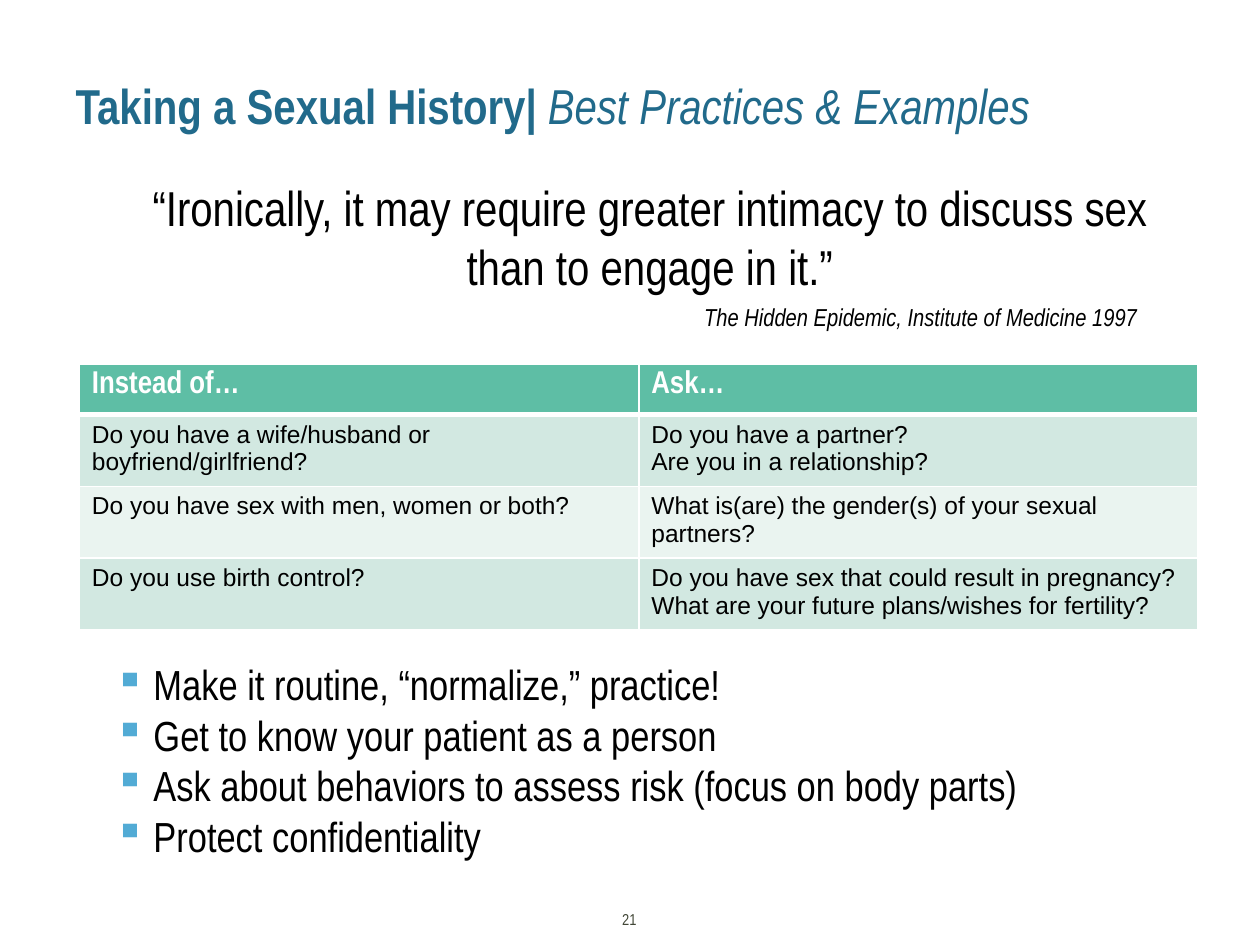
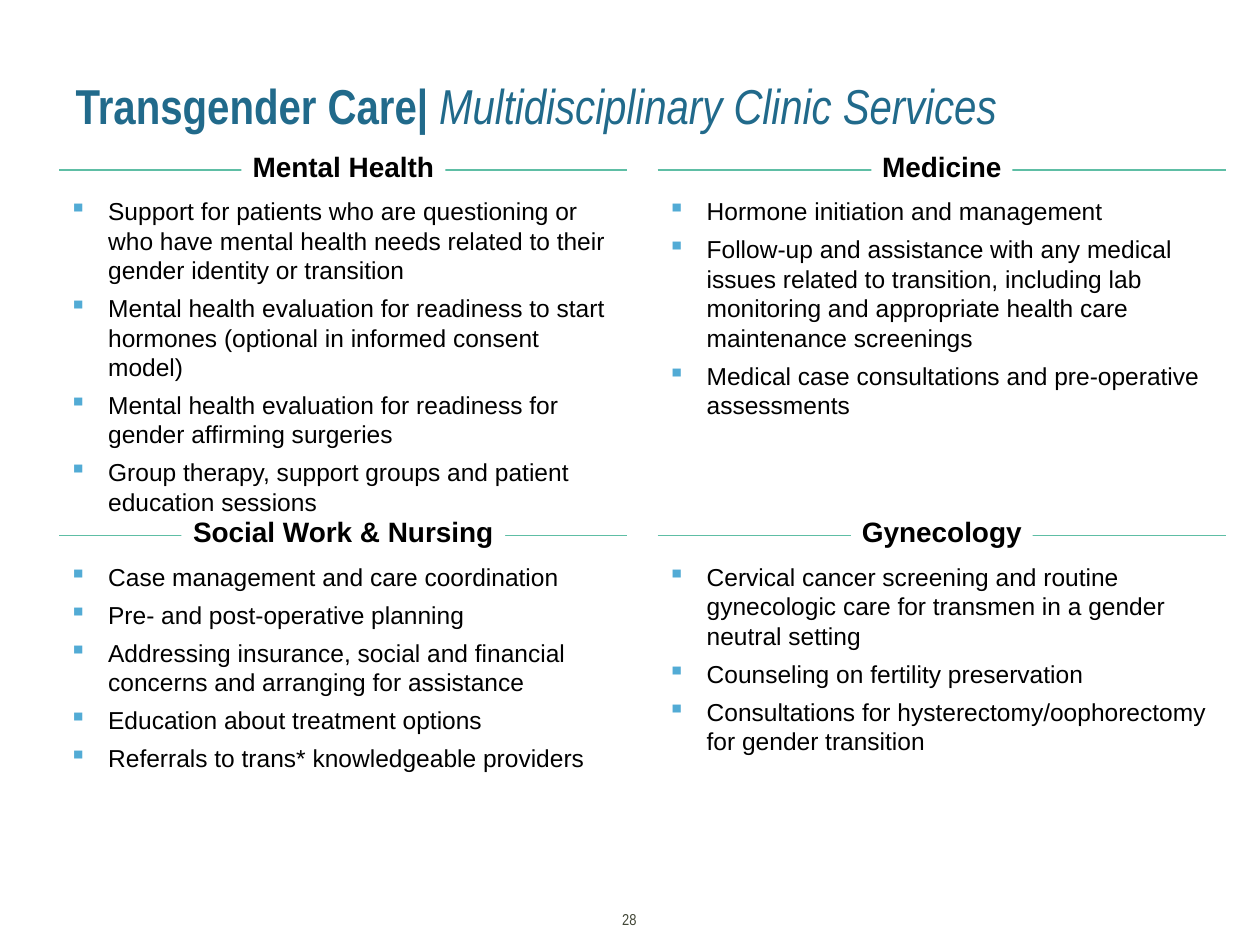
import pptx
import pptx.util
import pptx.dml.color
import pptx.enum.shapes
import pptx.enum.text
import pptx.oxml.ns
from lxml import etree

Inches, Pt = pptx.util.Inches, pptx.util.Pt
ALIGN = pptx.enum.text.PP_ALIGN
ANCHOR = pptx.enum.text.MSO_ANCHOR
qn = pptx.oxml.ns.qn

COLORS = {
    "title": "216A8B", "text": "000000", "white": "FFFFFF", "number": "414636",
    "bullet": "52ABD5", "green": "5EBEA5", "band": "D2E8E1", "band_light": "EAF4F0",
}
NARROW, SANS = "Arial Narrow", "Arial"

QUESTIONS = [
    (["Do you have a wife/husband or boyfriend/girlfriend?"],
     ["Do you have a partner?", "Are you in a relationship?"]),
    (["Do you have sex with men, women or both?"],
     ["What is(are) the gender(s) of your sexual partners?"]),
    (["Do you use birth control?"],
     ["Do you have sex that could result in pregnancy?",
      "What are your future plans/wishes for fertility?"]),
]
PRACTICES = [
    "Make it routine, “normalize,” practice!",
    "Get to know your patient as a person",
    "Ask about behaviors to assess risk (focus on body parts)",
    "Protect confidentiality",
]
# Heading, width of its label, services
CLINICS = [
    ("Mental Health", 1.62, [
        "Support for patients who are questioning or who have mental health needs "
        "related to their gender identity or transition",
        "Mental health evaluation for readiness to start hormones "
        "(optional in informed consent model)",
        "Mental health evaluation for readiness for gender affirming surgeries",
        "Group therapy, support groups and patient education sessions"]),
    ("Medicine", 1.12, [
        "Hormone initiation and management",
        "Follow-up and assistance with any medical issues related to transition, "
        "including lab monitoring and appropriate health care maintenance screenings",
        "Medical case consultations and pre-operative assessments"]),
    ("Social Work & Nursing", 2.57, [
        "Case management and care coordination",
        "Pre- and post-operative planning",
        "Addressing insurance, social and financial concerns and arranging for assistance",
        "Education about treatment options",
        "Referrals to trans* knowledgeable providers"]),
    ("Gynecology", 1.44, [
        "Cervical cancer screening and routine gynecologic care for transmen "
        "in a gender neutral setting",
        "Counseling on fertility preservation",
        "Consultations for hysterectomy/oophorectomy for gender transition"]),
]


def rgb(name):
    return pptx.dml.color.RGBColor.from_string(COLORS[name])


def add_run(p, text, size, font, color="text", bold=False, italic=False):
    r = p.add_run()
    r.text = text
    r.font.size, r.font.name = Pt(size), font
    r.font.bold, r.font.italic = bold, italic
    r.font.color.rgb = rgb(color)


def next_paragraph(tf, index):
    return tf.paragraphs[0] if index == 0 else tf.add_paragraph()


def add_textbox(s, x, y, w, h):
    tf = s.shapes.add_textbox(Inches(x), Inches(y), Inches(w), Inches(h)).text_frame
    tf.word_wrap = True
    return tf


def add_bullets(s, box, items, size, font, gap=0):
    tf = add_textbox(s, *box)
    for i, item in enumerate(items):
        p = next_paragraph(tf, i)
        pPr = p._p.get_or_add_pPr()
        pPr.set("marL", str(Inches(0.31)))
        pPr.set("indent", str(-Inches(0.31)))
        color = etree.SubElement(pPr, qn("a:buClr"))
        etree.SubElement(color, qn("a:srgbClr"), val=COLORS["bullet"])
        etree.SubElement(pPr, qn("a:buChar"), char="▪")
        if i:
            p.space_before = Pt(gap)
        add_run(p, item, size, font)


def new_slide(prs, topic, subtitle, number):
    """Slide with the shared title and page number."""
    s = prs.slides.add_slide(prs.slide_layouts[5])
    title = s.shapes.title
    title.left, title.top = Inches(0.5), Inches(0.6)
    title.width, title.height = Inches(9.33), Inches(0.53)
    tf = title.text_frame
    tf.auto_size = pptx.enum.text.MSO_AUTO_SIZE.NONE
    tf.vertical_anchor = ANCHOR.MIDDLE
    p = tf.paragraphs[0]
    p.alignment, p.line_spacing = ALIGN.LEFT, 0.9
    add_run(p, topic + "| ", 28, NARROW, "title", bold=True)
    add_run(p, subtitle, 28, NARROW, "title", italic=True)

    p = add_textbox(s, 4.74, 7.17, 0.51, 0.25).paragraphs[0]
    p.alignment = ALIGN.CENTER
    add_run(p, str(number), 9, NARROW, "number")
    return s


def add_quote(s, x, y, w, h):
    tf = add_textbox(s, x, y, w, h)
    p = tf.paragraphs[0]
    p.alignment = ALIGN.CENTER
    add_run(p, "“Ironically, it may require greater intimacy to discuss sex "
               "than to engage in it.”", 28, NARROW)
    p = tf.add_paragraph()
    p.space_before = Pt(4)
    p._p.get_or_add_pPr().set("marL", str(Inches(4.68)))
    p._p.get_or_add_pPr().set("indent", "0")
    add_run(p, "The Hidden Epidemic, Institute of Medicine 1997", 14, NARROW, italic=True)


def format_cell(cell, lines, fill, top, bottom, **style):
    tcPr = cell._tc.get_or_add_tcPr()
    for side, width in (("L", 1), ("R", 1), ("T", top), ("B", bottom)):
        ln = etree.SubElement(tcPr, qn("a:ln" + side), w=str(Pt(width)))
        solid = etree.SubElement(ln, qn("a:solidFill"))
        etree.SubElement(solid, qn("a:srgbClr"), val=COLORS["white"])
    cell.fill.solid()
    cell.fill.fore_color.rgb = rgb(fill)
    for i, line in enumerate(lines):
        add_run(next_paragraph(cell.text_frame, i), line, **style)


def add_question_table(s, x, y, w):
    heights = [0.4] + [0.57] * len(QUESTIONS)
    table = s.shapes.add_table(len(heights), 2, Inches(x), Inches(y),
                               Inches(w), Inches(sum(heights))).table
    for row, height in zip(table.rows, heights):
        row.height = Inches(height)
    for col, heading in enumerate(("Instead of…", "Ask…")):
        format_cell(table.cell(0, col), [heading], "green", 1, 3,
                    size=18, font=NARROW, color="white", bold=True)
        for row, question in enumerate(QUESTIONS, 1):
            format_cell(table.cell(row, col), question[col],
                        "band" if row % 2 else "band_light",
                        3 if row == 1 else 1, 1, size=14, font=SANS)


def add_clinic(s, x, y, w, h, heading, label_w, services):
    """Heading on a rule, with its services below."""
    line = s.shapes.add_connector(pptx.enum.shapes.MSO_CONNECTOR.STRAIGHT,
                                  Inches(x), Inches(y + 0.15),
                                  Inches(x + w), Inches(y + 0.15))
    line.line.color.rgb, line.line.width = rgb("green"), Pt(1)
    etree.SubElement(line._element.spPr, qn("a:effectLst"))

    label = s.shapes.add_shape(pptx.enum.shapes.MSO_SHAPE.RECTANGLE,
                               Inches(x + (w - label_w) / 2), Inches(y),
                               Inches(label_w), Inches(0.26))
    label.shadow.inherit = False
    label.fill.solid()
    label.fill.fore_color.rgb = rgb("white")
    label.line.fill.background()
    tf = label.text_frame
    tf.word_wrap, tf.vertical_anchor = False, ANCHOR.MIDDLE
    tf.margin_left = tf.margin_right = Inches(0.08)
    tf.margin_top = tf.margin_bottom = 0
    p = tf.paragraphs[0]
    p.alignment, p.line_spacing = ALIGN.CENTER, 0.95
    add_run(p, heading, 16, SANS, bold=True)

    add_bullets(s, (x - 0.02, y + 0.31, w, h - 0.31), services, 14, SANS, gap=4.9)


def build_history_slide(prs):
    s = new_slide(prs, "Taking a Sexual History", "Best Practices & Examples", 21)
    add_quote(s, 0.81, 1.36, 8.69, 1.35)
    add_question_table(s, 0.63, 2.89, 8.88)
    add_bullets(s, (0.81, 5.18, 8.42, 1.75), PRACTICES, 24, NARROW)


def build_clinic_slide(prs):
    s = new_slide(prs, "Transgender Care", "Multidisciplinary Clinic Services", 28)
    for i, clinic in enumerate(CLINICS):
        row, col = divmod(i, 2)
        add_clinic(s, 0.47 + 4.75 * col, 1.2 + 2.9 * row, 4.51, 2.74, *clinic)


def main():
    prs = pptx.Presentation()
    prs.slide_width, prs.slide_height = Inches(10), Inches(7.5)
    build_history_slide(prs)
    build_clinic_slide(prs)
    prs.save("out.pptx")


if __name__ == "__main__":
    main()
